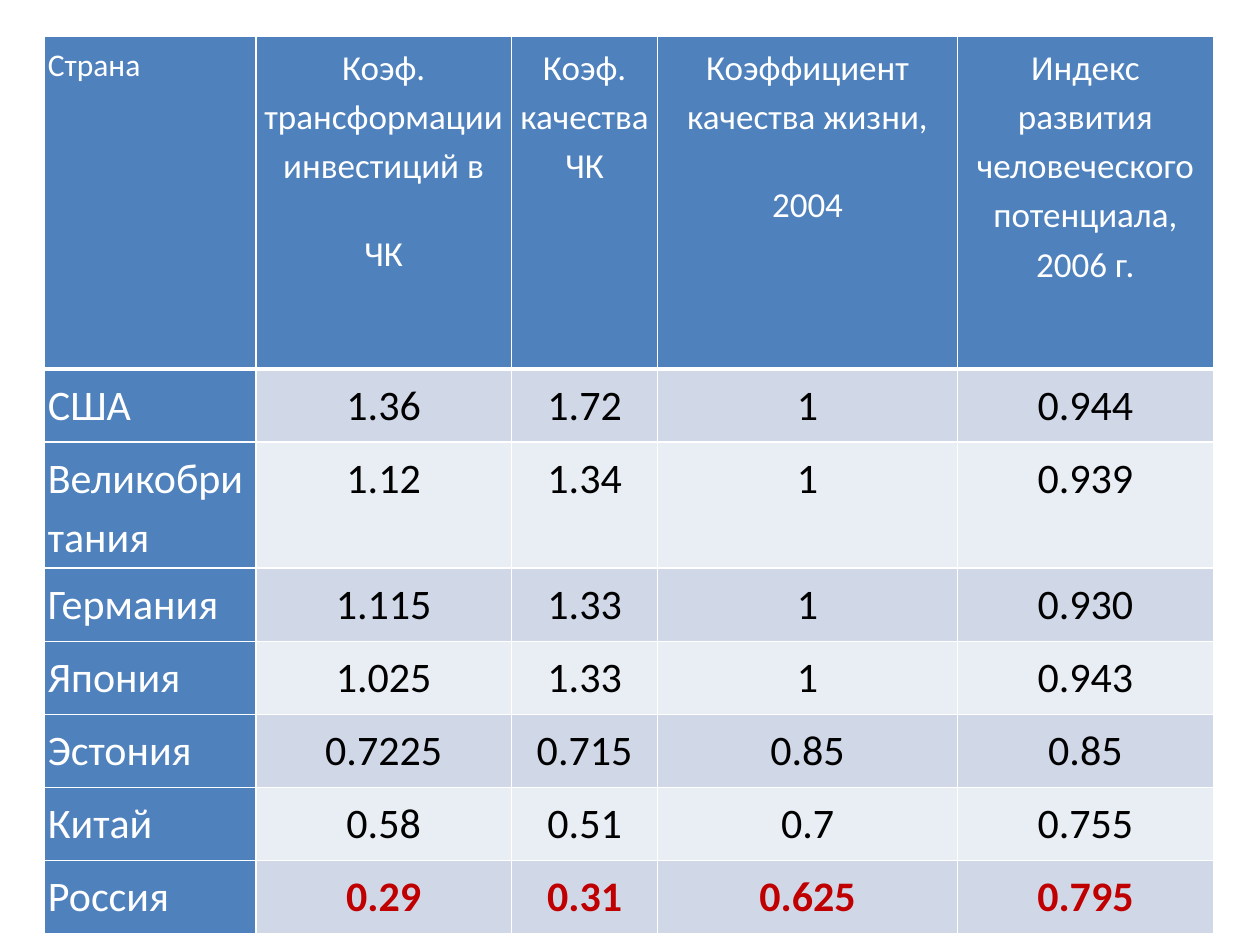
from lxml.etree import SubElement
from pptx import Presentation
from pptx.dml.color import RGBColor
from pptx.enum.text import PP_ALIGN
from pptx.oxml.ns import qn
from pptx.util import Inches, Pt

COLORS = {
    "header": "4F81BD",
    "odd_row": "D0D8E8",
    "even_row": "E9EDF4",
    "light_text": "FFFFFF",
    "dark_text": "000000",
    "highlight": "C00000",
    "border": "FFFFFF",
}
FONT = "Calibri"
LEFT, TOP = 0.35, 0.29
COLUMN_WIDTHS = [1.68, 2.03, 1.16, 2.38, 2.03]
HEADER_HEIGHT, ROW_HEIGHT, TALL_ROW_HEIGHT = 2.64, 0.58, 1.0
CELL_MARGIN = 0.03

# Each heading is a list of its paragraphs.
HEADINGS = [
    ["Страна"],
    ["Коэф. трансформации инвестиций в", "ЧК"],
    ["Коэф. качества ЧК"],
    ["Коэффициент качества жизни,", "2004"],
    ["Индекс развития человеческого потенциала, 2006 г."],
]
COUNTRIES = [
    ["США", "1.36", "1.72", "1", "0.944"],
    ["Великобритания", "1.12", "1.34", "1", "0.939"],
    ["Германия", "1.115", "1.33", "1", "0.930"],
    ["Япония", "1.025", "1.33", "1", "0.943"],
    ["Эстония", "0.7225", "0.715", "0.85", "0.85"],
    ["Китай", "0.58", "0.51", "0.7", "0.755"],
    ["Россия", "0.29", "0.31", "0.625", "0.795"],
]
TALL_COUNTRY = "Великобритания"
HIGHLIGHTED_COUNTRY = "Россия"


def rgb(name):
    return RGBColor.from_string(COLORS[name])


def set_borders(cell, bottom_width=1):
    properties = cell._tc.get_or_add_tcPr()
    for side, width in (("L", 1), ("R", 1), ("T", 1), ("B", bottom_width)):
        line = SubElement(properties, qn(f"a:ln{side}"), w=str(Pt(width)))
        fill = SubElement(line, qn("a:solidFill"))
        SubElement(fill, qn("a:srgbClr"), val=COLORS["border"])


def fill_cell(cell, texts, fill, color, size, centered=True, bold=False, bottom_width=1):
    set_borders(cell, bottom_width)
    cell.fill.solid()
    cell.fill.fore_color.rgb = rgb(fill)
    cell.margin_left = cell.margin_right = Inches(CELL_MARGIN)
    cell.margin_top = cell.margin_bottom = Inches(CELL_MARGIN)
    cell.text = "\n".join(texts)
    for index, paragraph in enumerate(cell.text_frame.paragraphs):
        paragraph.alignment = PP_ALIGN.CENTER if centered else PP_ALIGN.LEFT
        paragraph.line_spacing = 1.15
        paragraph.space_before = Pt(12 if index else 0)
        paragraph.space_after = Pt(10)
        font = paragraph.font
        font.name, font.size, font.bold = FONT, Pt(size), bold
        font.color.rgb = rgb(color)


def add_country_table(slide):
    row_heights = [HEADER_HEIGHT] + [
        TALL_ROW_HEIGHT if country[0] == TALL_COUNTRY else ROW_HEIGHT
        for country in COUNTRIES
    ]
    table = slide.shapes.add_table(
        len(row_heights), len(COLUMN_WIDTHS), Inches(LEFT), Inches(TOP),
        Inches(sum(COLUMN_WIDTHS)), Inches(sum(row_heights)),
    ).table
    table.first_col = True
    for column, width in zip(table.columns, COLUMN_WIDTHS):
        column.width = Inches(width)
    for row, height in zip(table.rows, row_heights):
        row.height = Inches(height)
    return table


def fill_headings(table):
    for column, texts in enumerate(HEADINGS):
        fill_cell(table.cell(0, column), texts, "header", "light_text",
                  size=20 if column else 18, centered=column > 0, bottom_width=3)


def fill_countries(table):
    for row, (country, *values) in enumerate(COUNTRIES, start=1):
        fill_cell(table.cell(row, 0), [country], "header", "light_text", 24, centered=False)
        band = "odd_row" if row % 2 else "even_row"
        highlighted = country == HIGHLIGHTED_COUNTRY
        color = "highlight" if highlighted else "dark_text"
        for column, value in enumerate(values, start=1):
            fill_cell(table.cell(row, column), [value], band, color, 24, bold=highlighted)


def main():
    presentation = Presentation()
    presentation.slide_width, presentation.slide_height = Inches(10), Inches(7.5)
    slide = presentation.slides.add_slide(presentation.slide_layouts[6])
    table = add_country_table(slide)
    fill_headings(table)
    fill_countries(table)
    presentation.save("out.pptx")


if __name__ == "__main__":
    main()
